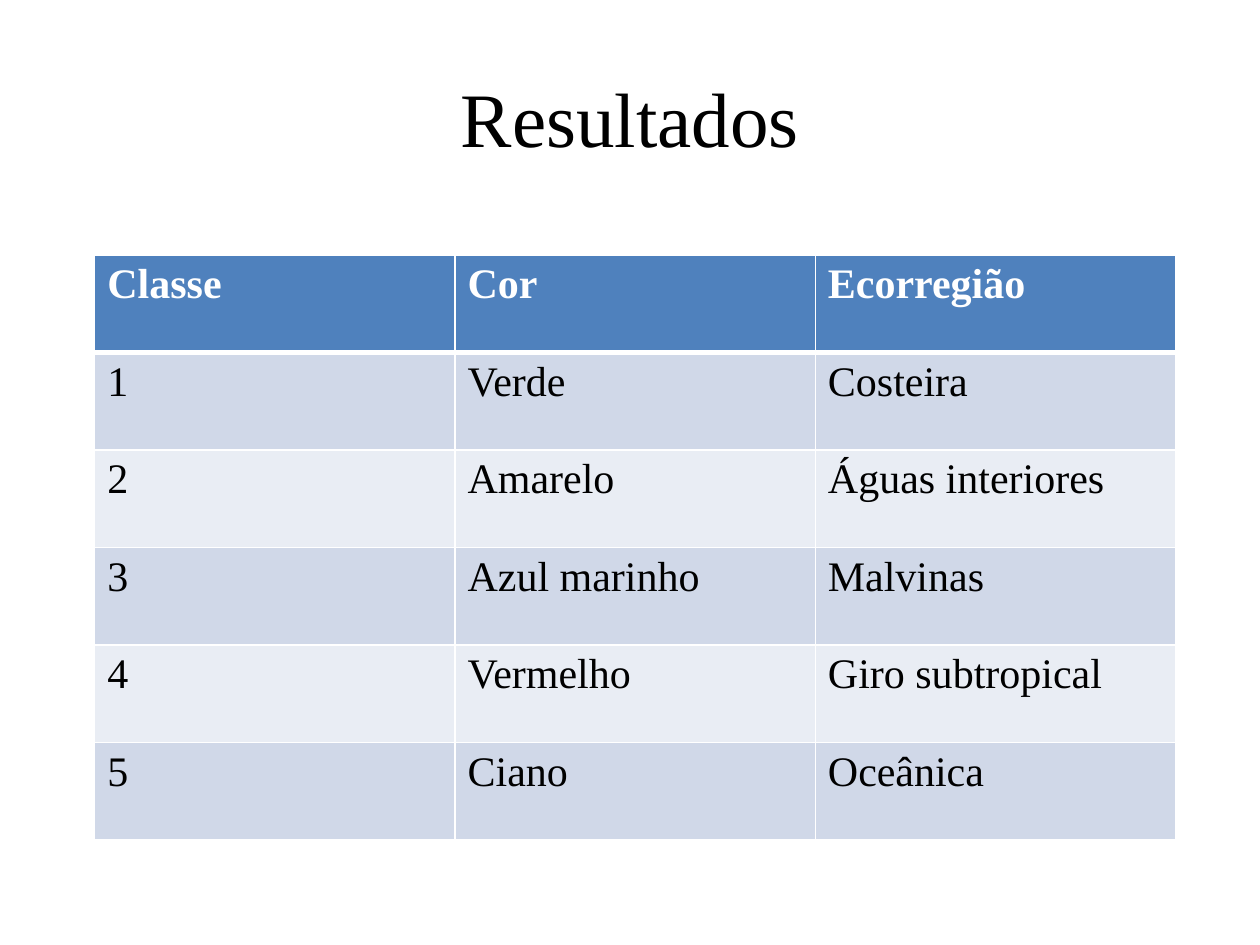
from lxml import etree
from pptx import Presentation
from pptx import util as u
from pptx.dml.color import RGBColor
from pptx.enum import text
from pptx.oxml import ns

FONT = "Times New Roman"
WHITE, BLACK = "FFFFFF", "000000"
HEADER_FILL = "4F81BD"
BAND_FILLS = ("E9EDF4", "D0D8E8")
ROWS = [
    ("Classe", "Cor", "Ecorregião"),
    ("1", "Verde", "Costeira"),
    ("2", "Amarelo", "Águas interiores"),
    ("3", "Azul marinho", "Malvinas"),
    ("4", "Vermelho", "Giro subtropical"),
    ("5", "Ciano", "Oceânica"),
]


def color(hex_value):
    return RGBColor.from_string(hex_value)


def format_paragraph(paragraph, size, hex_value, bold=False):
    font = paragraph.font
    font.name, font.size, font.bold = FONT, u.Pt(size), bold
    font.color.rgb = color(hex_value)


def add_title(slide, wording):
    title = slide.shapes.title
    title.left, title.top = u.Cm(1.27), u.Cm(0.76)
    title.width, title.height = u.Cm(22.86), u.Cm(3.18)
    title.text_frame.text = wording
    title.text_frame.vertical_anchor = text.MSO_ANCHOR.MIDDLE
    paragraph = title.text_frame.paragraphs[0]
    paragraph.alignment = text.PP_ALIGN.CENTER
    format_paragraph(paragraph, 44, BLACK)


def set_borders(cell, top, bottom):
    """Draw white borders; top and bottom are widths in points."""
    properties = cell._tc.get_or_add_tcPr()
    for side, width in (("L", 1), ("R", 1), ("T", top), ("B", bottom)):
        line = etree.SubElement(properties, ns.qn(f"a:ln{side}"), w=str(u.Pt(width)))
        fill = etree.SubElement(line, ns.qn("a:solidFill"))
        etree.SubElement(fill, ns.qn("a:srgbClr"), val=WHITE)


def format_cell(cell, wording, row_index):
    is_header = row_index == 0
    set_borders(cell, top=3 if row_index == 1 else 1, bottom=3 if is_header else 1)
    cell.fill.solid()
    cell.fill.fore_color.rgb = color(HEADER_FILL if is_header else BAND_FILLS[row_index % 2])
    cell.text = wording
    format_paragraph(cell.text_frame.paragraphs[0], 24, WHITE if is_header else BLACK, is_header)


def add_class_table(slide):
    frame = slide.shapes.add_table(
        len(ROWS), len(ROWS[0]), u.Cm(1.91), u.Cm(5.14), u.Cm(21.79), u.Cm(11.8))
    for row_index, row in enumerate(ROWS):
        for column_index, wording in enumerate(row):
            format_cell(frame.table.cell(row_index, column_index), wording, row_index)


def main():
    presentation = Presentation()
    presentation.slide_width, presentation.slide_height = u.Cm(25.4), u.Cm(19.05)
    slide = presentation.slides.add_slide(presentation.slide_layouts.get_by_name("Title Only"))
    add_title(slide, "Resultados")
    add_class_table(slide)
    presentation.save("out.pptx")


if __name__ == "__main__":
    main()
